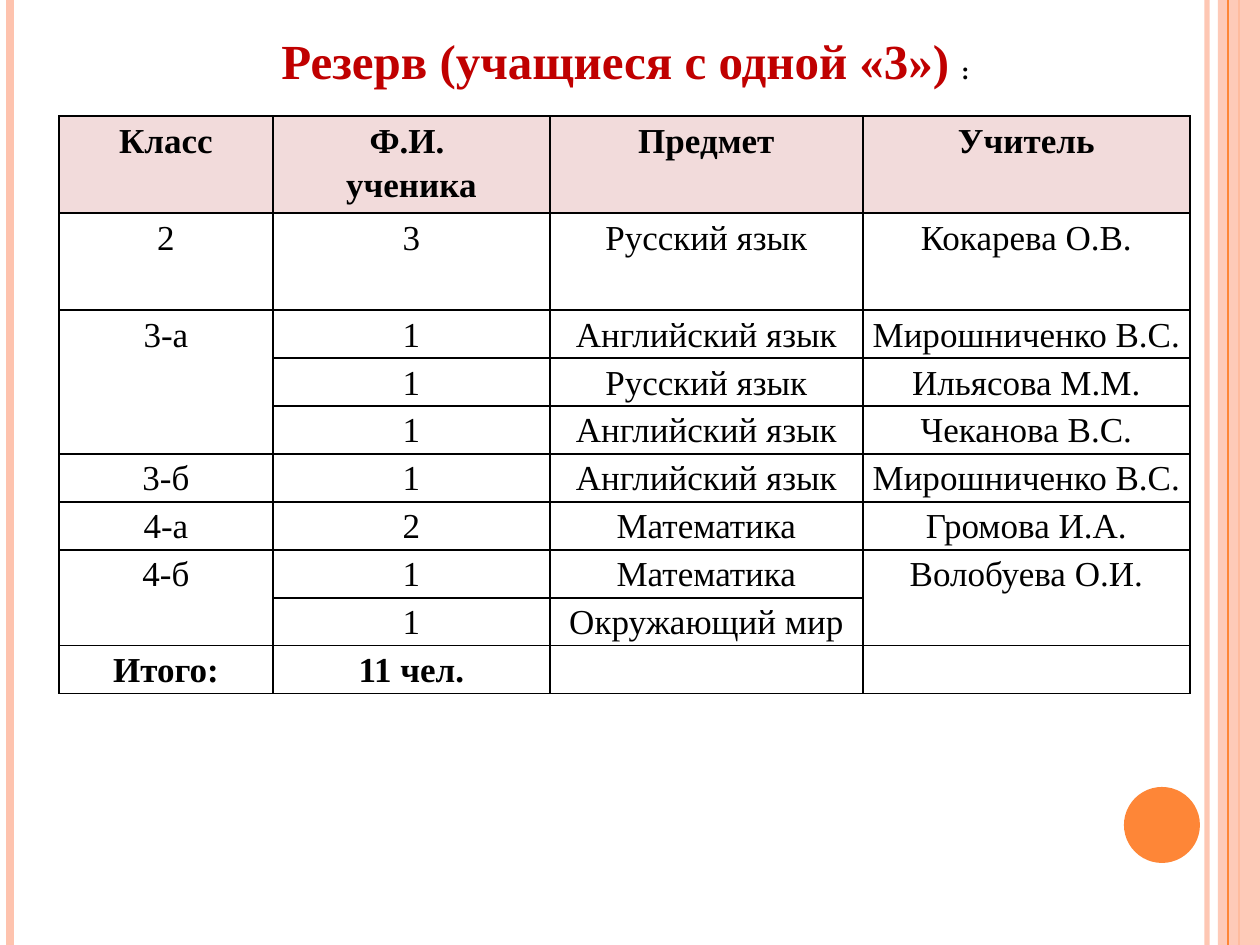
from dataclasses import dataclass

from lxml import etree
from pptx import Presentation
from pptx.dml.color import RGBColor
from pptx.enum.shapes import MSO_CONNECTOR, MSO_SHAPE
from pptx.enum.text import MSO_ANCHOR, PP_ALIGN
from pptx.oxml.ns import qn
from pptx.util import Emu, Pt

SLIDE_W, SLIDE_H = 1260, 945


@dataclass(frozen=True)
class Theme:
    font: str = "Times New Roman"
    heading: str = "C00000"
    ink: str = "000000"
    peach: str = "FEC3AE"
    orange: str = "FE8637"
    header_fill: str = "F2DBDB"
    heading_size: int = 28
    colon_size: int = 14
    table_size: int = 20
    line_spacing: float = 1.15
    border: int = 1


THEME = Theme()

HEADER = ["Класс", "Ф.И. \nученика", "Предмет", "Учитель"]
RESULTS = [
    ["2", "3", "Русский язык", "Кокарева О.В."],
    ["3-а", "1", "Английский язык", "Мирошниченко В.С."],
    ["", "1", "Русский язык", "Ильясова М.М."],
    ["", "1", "Английский язык", "Чеканова В.С."],
    ["3-б", "1", "Английский язык", "Мирошниченко В.С."],
    ["4-а", "2", "Математика", "Громова И.А."],
    ["4-б", "1", "Математика", "Волобуева О.И."],
    ["", "1", "Окружающий мир", ""],
]
TOTAL = ["Итого:", "11 чел.", "", ""]
MERGES = [((2, 0), (4, 0)), ((7, 0), (8, 0)), ((7, 3), (8, 3))]
COLUMNS = [214, 277, 313, 327]
ROW, TALL_ROW = 48, 97


def px(length):
    return Emu(round(length * 914400 / 126))


def rgb(color):
    return RGBColor.from_string(color)


def set_alpha(parent, percent):
    color = next(parent.iter(qn("a:srgbClr")))
    etree.SubElement(color, qn("a:alpha"), val=str(percent * 1000))


def add_text(paragraph, text, *, size, color=THEME.ink, bold=False, spacing=None):
    paragraph.alignment = PP_ALIGN.CENTER
    if spacing:
        paragraph.line_spacing = spacing
    run = paragraph.add_run()
    run.text = text
    run.font.name = THEME.font
    run.font.size = Pt(size)
    run.font.bold = bold
    run.font.color.rgb = rgb(color)


def add_stripe(slide, x, color, width, alpha=None):
    stripe = slide.shapes.add_connector(
        MSO_CONNECTOR.STRAIGHT, px(x), 0, px(x), px(SLIDE_H))
    stripe.line.color.rgb = rgb(color)
    stripe.line.width = Pt(width)
    properties = stripe._element.spPr
    if alpha:
        set_alpha(properties, alpha)
    etree.SubElement(properties, qn("a:effectLst"))


def add_block(slide, preset, box, color, alpha=None):
    block = slide.shapes.add_shape(preset, *map(px, box))
    block.shadow.inherit = False
    block.fill.solid()
    block.fill.fore_color.rgb = rgb(color)
    block.line.fill.background()
    if alpha:
        set_alpha(block._element.spPr, alpha)


def add_decoration(slide, left, right):
    """Stripes along both edges and the disc, placed from the slide edges."""
    add_stripe(slide, right - 53, THEME.peach, 3, alpha=93)
    add_stripe(slide, left + 10, THEME.peach, 4.5)
    add_stripe(slide, right - 21, THEME.orange, 1.5)
    add_block(slide, MSO_SHAPE.RECTANGLE, (right - 42, 0, 42, SLIDE_H),
              THEME.peach, alpha=87)
    add_stripe(slide, right - 32, THEME.orange, 0.75)
    add_block(slide, MSO_SHAPE.OVAL, (right - 136, 787, 76, 76), THEME.orange)


def add_heading(slide, box):
    heading = slide.shapes.title
    heading.left, heading.top, heading.width, heading.height = map(px, box)
    frame = heading.text_frame
    frame.word_wrap = False
    frame.vertical_anchor = MSO_ANCHOR.MIDDLE
    line = frame.paragraphs[0]
    add_text(line, "Резерв (учащиеся с одной «3») ", size=THEME.heading_size,
             color=THEME.heading, bold=True)
    add_text(line, ":", size=THEME.colon_size, bold=True)


def add_borders(cell):
    properties = cell._tc.get_or_add_tcPr()
    for index, side in enumerate(("lnL", "lnR", "lnT", "lnB")):
        border = etree.Element(qn(f"a:{side}"), w=str(Pt(THEME.border)))
        fill = etree.SubElement(border, qn("a:solidFill"))
        etree.SubElement(fill, qn("a:srgbClr"), val=THEME.ink)
        properties.insert(index, border)


def fill_cell(cell, text, bold, fill=None):
    cell.margin_left = cell.margin_right = px(9)
    cell.margin_top = cell.margin_bottom = 0
    if fill:
        cell.fill.solid()
        cell.fill.fore_color.rgb = rgb(fill)
    else:
        cell.fill.background()
    add_borders(cell)
    if not text:
        return
    frame = cell.text_frame
    for index, line in enumerate(text.split("\n")):
        paragraph = frame.add_paragraph() if index else frame.paragraphs[0]
        add_text(paragraph, line, size=THEME.table_size, bold=bold,
                 spacing=THEME.line_spacing)


def add_results(slide, left, top):
    rows = [HEADER, *RESULTS, TOTAL]
    heights = [TALL_ROW] * 2 + [ROW] * (len(rows) - 2)
    table = slide.shapes.add_table(
        len(rows), len(COLUMNS), px(left), px(top),
        px(sum(COLUMNS)), px(sum(heights))).table
    table.first_row = table.horz_banding = False
    for column, width in zip(table.columns, COLUMNS):
        column.width = px(width)
    for row, height in zip(table.rows, heights):
        row.height = px(height)
    # Header and total rows are bold, only the header is tinted
    for r, texts in enumerate(rows):
        for c, text in enumerate(texts):
            fill_cell(table.cell(r, c), text, bold=r in (0, len(rows) - 1),
                      fill=THEME.header_fill if r == 0 else None)
    # One class or teacher covering several rows
    for first, last in MERGES:
        table.cell(*first).merge(table.cell(*last))


def main():
    deck = Presentation()
    deck.slide_width, deck.slide_height = px(SLIDE_W), px(SLIDE_H)
    slide = deck.slides.add_slide(deck.slide_layouts[5])
    add_decoration(slide, 0, SLIDE_W)
    add_heading(slide, (263, 24, 725, 72))
    add_results(slide, 59, 116)
    deck.save("out.pptx")


if __name__ == "__main__":
    main()
